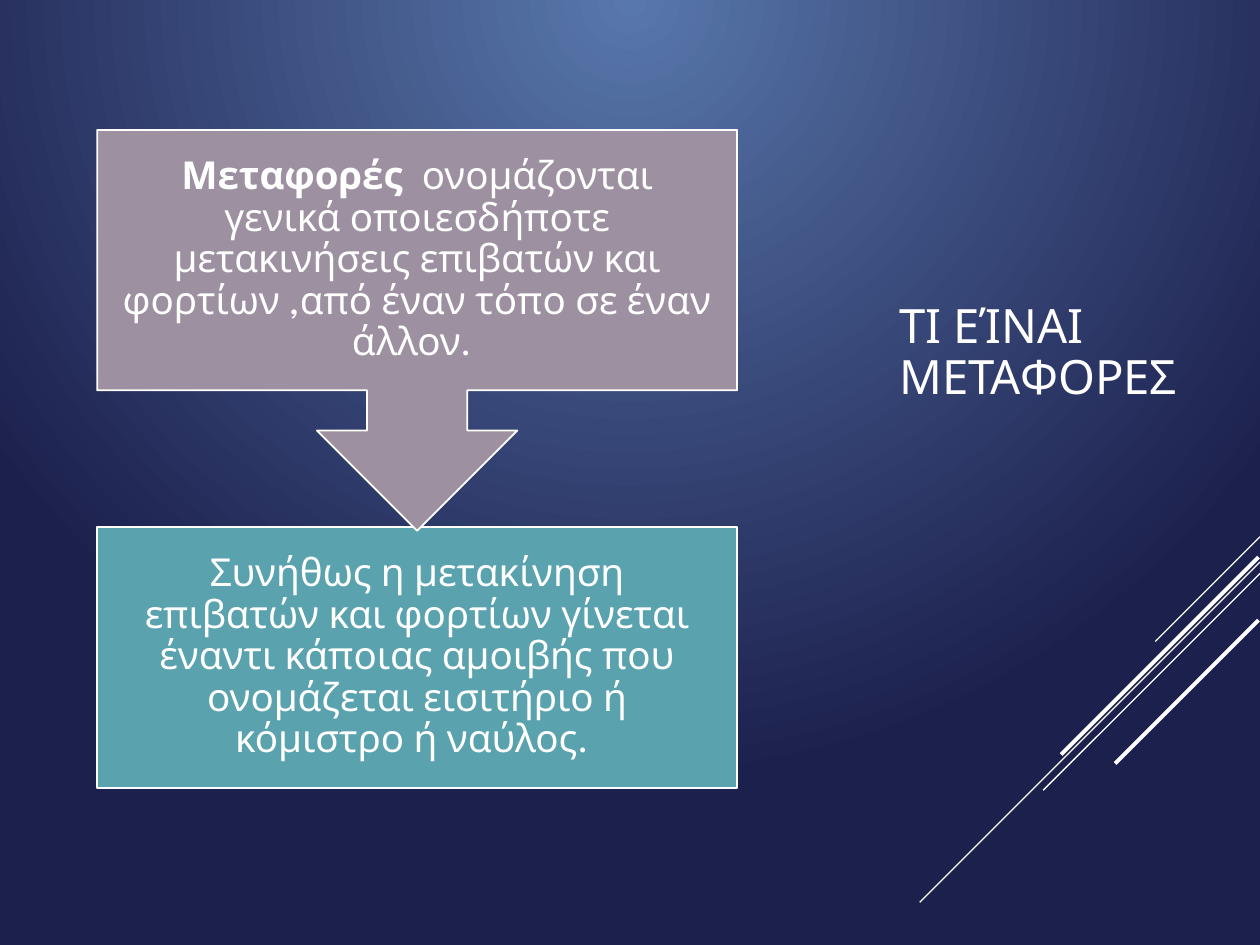
from lxml import etree
from pptx import Presentation
from pptx.dml.color import RGBColor
from pptx.enum.shapes import MSO_CONNECTOR as CONN, MSO_SHAPE as SHAPE
from pptx.enum.text import MSO_ANCHOR as ANCHOR, PP_ALIGN as ALIGN
from pptx.oxml.ns import qn
from pptx.util import Cm, Pt

FONT = "League Spartan"
COLORS = {
    "glow": "5877AB",
    "navy": "1C204D",
    "white": "FFFFFF",
    "mauve": "9D90A0",
    "teal": "5AA2AE",
}
TITLE = "ΤΙ ΕΊΝΑΙ ΜΕΤΑΦΟΡΕΣ"
DEFINITION = [
    ("Μεταφορές", True),
    ("  ονομάζονται γενικά οποιεσδήποτε μετακινήσεις επιβατών και "
     "φορτίων ,από έναν τόπο σε έναν άλλον. ", False),
]
PAYMENT = [
    ("Συνήθως η μετακίνηση επιβατών και φορτίων γίνεται έναντι κάποιας "
     "αμοιβής που ονομάζεται εισιτήριο ή κόμιστρο ή ναύλος. ", False),
]
DIAGONALS = [
    (25.4, 10.82, 2.11, 0.75),
    (25.4, 11.33, 6.86, 0.75),
    (25.4, 11.56, 4.37, 0.75),
    (25.37, 11.23, 3.98, 2.25),
    (25.37, 12.5, 2.89, 2.25),
]


def rgb(name):
    """Return the named colour."""
    return RGBColor.from_string(COLORS[name])


def set_background(s):
    """Fill the background with a glow from the top centre."""
    fill = s.background.fill
    fill.gradient()
    for stop, name in zip(fill.gradient_stops, ("glow", "navy")):
        stop.color.rgb = rgb(name)
    grad = s.background._cSld.find(".//" + qn("a:gradFill"))
    grad.remove(grad.find(qn("a:lin")))
    circle = etree.Element(qn("a:path"), path="circle")
    etree.SubElement(circle, qn("a:fillToRect"), l="0", t="0", r="0", b="100000")
    grad.find(qn("a:gsLst")).addnext(circle)


def add_diagonal(s, x, y, span, weight):
    """Draw a 45-degree line down and left from a point."""
    line = s.shapes.add_connector(
        CONN.STRAIGHT, Cm(x), Cm(y), Cm(x - span), Cm(y + span))
    line.line.color.rgb = rgb("white")
    line.line.width = Pt(weight)
    etree.SubElement(line._element.spPr, qn("a:effectLst"))


def write(sp, runs, size, align):
    """Write one paragraph of runs, centred vertically."""
    tf = sp.text_frame
    tf.word_wrap = True
    tf.vertical_anchor = ANCHOR.MIDDLE
    p = tf.paragraphs[0]
    p.alignment = align
    p.line_spacing = 0.9
    for text, bold in runs:
        r = p.add_run()
        r.text = text
        r.font.name = FONT
        r.font.size = Pt(size)
        r.font.bold = bold
        r.font.color.rgb = rgb("white")


def add_title(s):
    """Add the slide title at the right."""
    sp = s.shapes.add_textbox(Cm(17.88), Cm(2.62), Cm(6.35), Cm(9.02))
    write(sp, [(TITLE, False)], 27, ALIGN.LEFT)


def add_step(s, kind, top, height, color, runs):
    """Add one step of the vertical process."""
    sp = s.shapes.add_shape(kind, Cm(1.96), Cm(top), Cm(12.9), Cm(height))
    sp.shadow.inherit = False
    sp.fill.solid()
    sp.fill.fore_color.rgb = rgb(color)
    sp.line.color.rgb = rgb("white")
    sp.line.width = Pt(1)
    tf = sp.text_frame
    tf.margin_left = tf.margin_right = tf.margin_top = tf.margin_bottom = Cm(0.43)
    write(sp, runs, 22, ALIGN.CENTER)


def main():
    """Build and save the slide."""
    prs = Presentation()
    prs.slide_width, prs.slide_height = Cm(25.4), Cm(19.05)
    s = prs.slides.add_slide(prs.slide_layouts[6])
    set_background(s)
    for diagonal in DIAGONALS:
        add_diagonal(s, *diagonal)
    add_title(s)
    add_step(s, SHAPE.RECTANGLE, 10.62, 5.26, "teal", PAYMENT)
    add_step(s, SHAPE.DOWN_ARROW_CALLOUT, 2.62, 8.08, "mauve", DEFINITION)
    prs.save("out.pptx")


if __name__ == "__main__":
    main()
